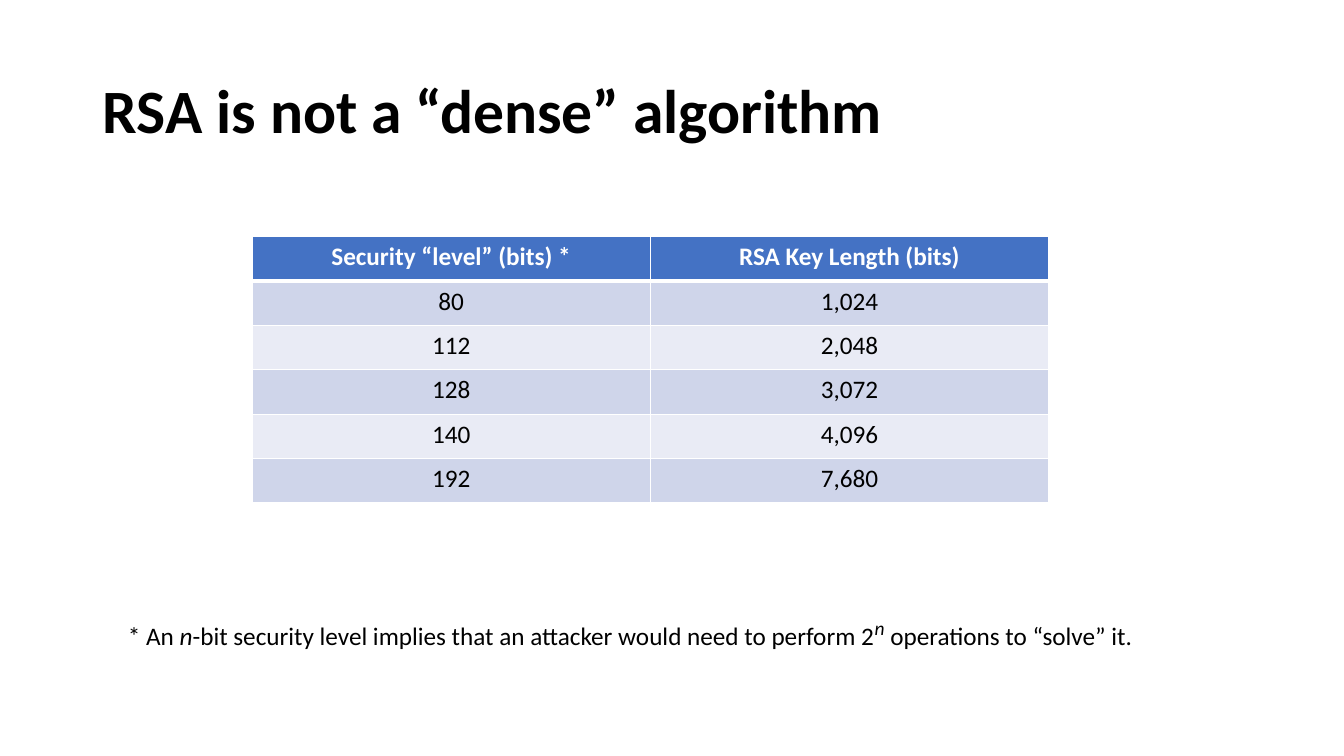
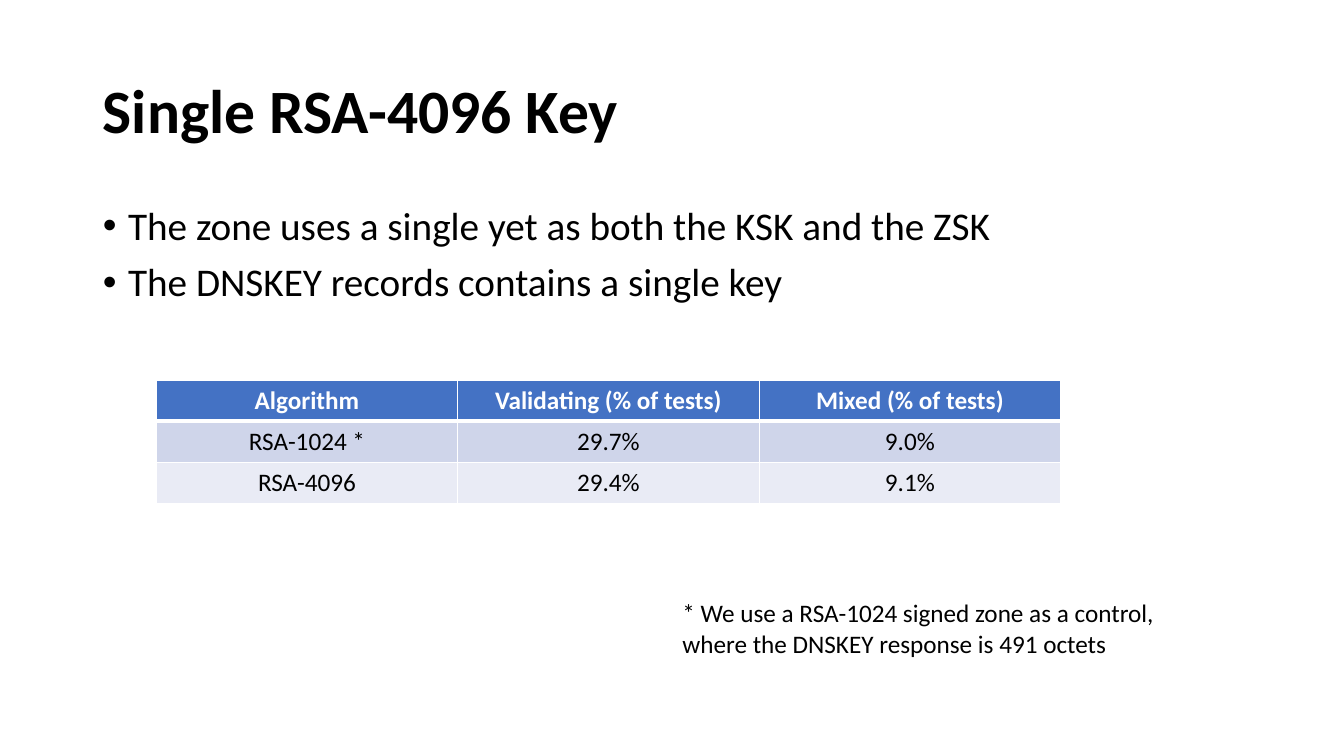
from lxml import etree
from pptx import Presentation
from pptx.dml.color import RGBColor
from pptx.enum.text import MSO_ANCHOR, MSO_AUTO_SIZE, PP_ALIGN
from pptx.oxml.ns import qn
from pptx.util import Inches, Pt

CENTER, LEFT = PP_ALIGN.CENTER, PP_ALIGN.LEFT
MIDDLE, TOP = MSO_ANCHOR.MIDDLE, MSO_ANCHOR.TOP
NO_FIT = MSO_AUTO_SIZE.NONE
CONTENT_LAYOUT, TITLE_LAYOUT = 1, 5

FONT = "Calibri"
COLORS = {
    "text": "000000",
    "white": "FFFFFF",
    "header": "4472C4",
    "odd": "CFD5EA",
    "even": "E9EBF5",
}
TITLE_AREA = (0.92, 0.4, 11.5, 1.45)
BODY_AREA = (0.92, 2, 11.5, 4.76)
BULLET_INDENT = 0.25

SLIDES = [
    {
        "title": "RSA is not a “dense” algorithm",
        "bullets": [],
        "table": {
            "at": (2.5, 2.35),
            "cell": (3.95, 0.44),
            "rows": [
                ("Security “level” (bits) *", "RSA Key Length (bits)"),
                ("80", "1,024"),
                ("112", "2,048"),
                ("128", "3,072"),
                ("140", "4,096"),
                ("192", "7,680"),
            ],
        },
        "note": {
            "area": (1.17, 6.02, 10.23, 0.4),
            "wrap": False,
            "runs": [
                ("* An ", {}),
                ("n", {"italic": True}),
                ("-bit security level implies that an attacker would need to perform 2", {}),
                ("n", {"size": 24, "italic": True, "raised": 30}),
                (" operations to “solve” it.", {}),
            ],
        },
    },
    {
        "title": "Single RSA-4096 Key",
        "bullets": [
            "The zone uses a single yet as both the KSK and the ZSK",
            "The DNSKEY records contains a single key",
        ],
        "table": {
            "at": (1.55, 3.77),
            "cell": (2.99, 0.41),
            "rows": [
                ("Algorithm", "Validating (% of tests)", "Mixed (% of tests)"),
                ("RSA-1024 *", "29.7%", "9.0%"),
                ("RSA-4096", "29.4%", "9.1%"),
            ],
        },
        "note": {
            "area": (6.67, 5.88, 5.24, 0.71),
            "wrap": True,
            "runs": [
                ("* We use a RSA-1024 signed zone as a control, "
                 "where the DNSKEY response is 491 octets", {}),
            ],
        },
    },
]


def rgb(name):
    return RGBColor.from_string(COLORS[name])


def add_span(para, text, size=18, color="text", bold=False, italic=False, raised=0):
    span = para.add_run()
    span.text = text
    font = span.font
    font.name, font.size = FONT, Pt(size)
    font.bold, font.italic = bold, italic
    font.color.rgb = rgb(color)
    if raised:
        font._element.set("baseline", str(raised * 1000))


def place(shape, area):
    shape.left, shape.top, shape.width, shape.height = map(Inches, area)


def fill_title(title, text):
    place(title, TITLE_AREA)
    frame = title.text_frame
    frame.auto_size = NO_FIT
    frame.vertical_anchor = MIDDLE
    para = frame.paragraphs[0]
    para.alignment, para.line_spacing = LEFT, 0.9
    add_span(para, text, size=44, bold=True)


def fill_bullets(body, items):
    place(body, BODY_AREA)
    frame = body.text_frame
    frame.auto_size = NO_FIT
    frame.vertical_anchor = TOP
    for index, item in enumerate(items):
        para = frame.add_paragraph() if index else frame.paragraphs[0]
        para.line_spacing, para.space_before = 0.9, Pt(10)
        props = para._p.get_or_add_pPr()
        props.set("marL", str(Inches(BULLET_INDENT)))
        props.set("indent", str(-Inches(BULLET_INDENT)))
        etree.SubElement(props, qn("a:buFont"), typeface="Arial")
        etree.SubElement(props, qn("a:buChar"), char="•")
        add_span(para, item, size=28)


def set_borders(cell, top, bottom):
    props = cell._tc.get_or_add_tcPr()
    for side, width in (("L", 1), ("R", 1), ("T", top), ("B", bottom)):
        line = etree.SubElement(props, qn("a:ln" + side), w=str(Pt(width)))
        fill = etree.SubElement(line, qn("a:solidFill"))
        etree.SubElement(fill, qn("a:srgbClr"), val=COLORS["white"])


def add_data_table(page, spec_at, cell_size, rows):
    width, height = cell_size
    column_count = len(rows[0])
    area = (*spec_at, width * column_count, height * len(rows))
    table = page.shapes.add_table(len(rows), column_count, *map(Inches, area)).table
    for column in table.columns:
        column.width = Inches(width)
    for r, values in enumerate(rows):
        table.rows[r].height = Inches(height)
        is_header = r == 0
        band = "header" if is_header else ("odd" if r % 2 else "even")
        for c, value in enumerate(values):
            cell = table.cell(r, c)
            set_borders(cell, top=3 if r == 1 else 1, bottom=3 if is_header else 1)
            cell.fill.solid()
            cell.fill.fore_color.rgb = rgb(band)
            para = cell.text_frame.paragraphs[0]
            para.alignment = CENTER
            add_span(para, value, color="white" if is_header else "text", bold=is_header)


def add_note(page, area, wrap, runs):
    box = page.shapes.add_textbox(*map(Inches, area))
    box.text_frame.word_wrap = wrap
    para = box.text_frame.paragraphs[0]
    for text, style in runs:
        add_span(para, text, **style)


def main():
    deck = Presentation()
    deck.slide_width, deck.slide_height = Inches(13.33), Inches(7.5)
    for content in SLIDES:
        bullets, table = content["bullets"], content["table"]
        layout = CONTENT_LAYOUT if bullets else TITLE_LAYOUT
        page = deck.slides.add_slide(deck.slide_layouts[layout])
        fill_title(page.shapes.title, content["title"])
        if bullets:
            fill_bullets(page.placeholders[1], bullets)
        add_data_table(page, table["at"], table["cell"], table["rows"])
        add_note(page, **content["note"])
    deck.save("out.pptx")


if __name__ == "__main__":
    main()
